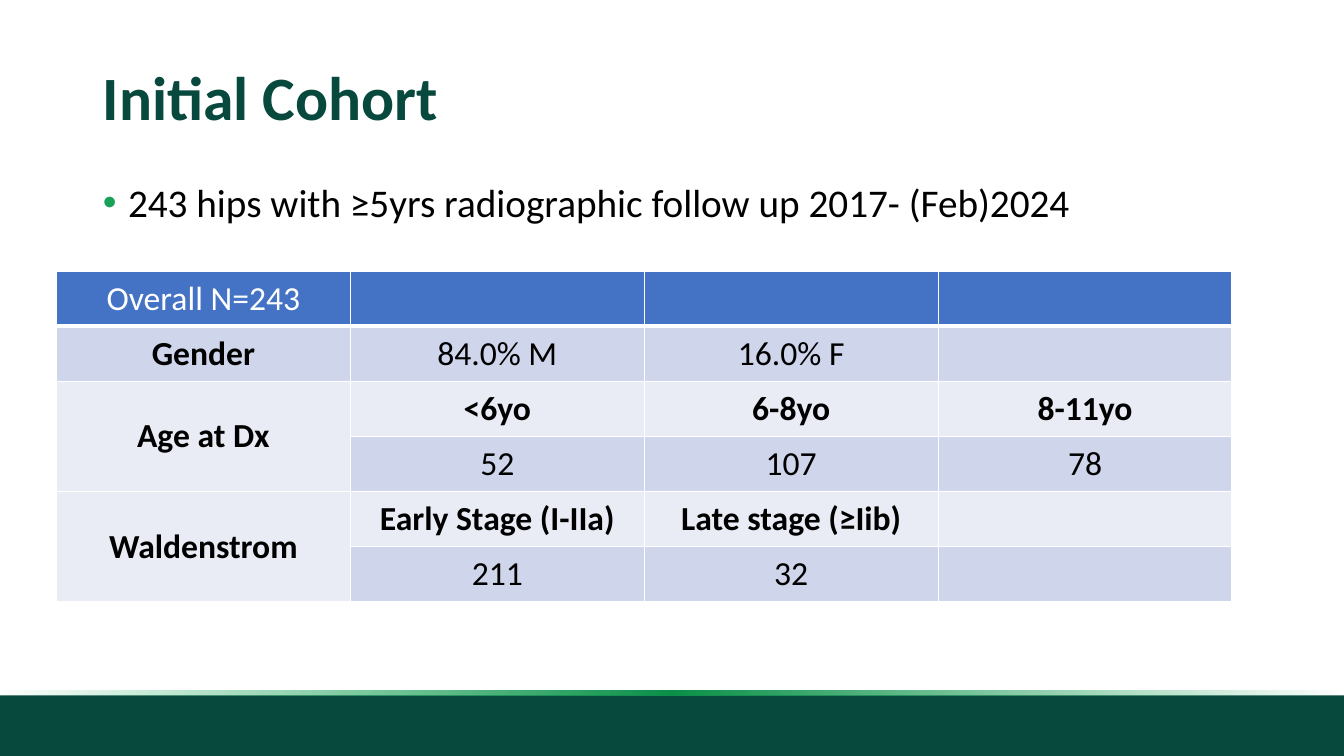
from pptx import Presentation
from pptx.dml.color import RGBColor
from pptx.enum.shapes import MSO_SHAPE
from pptx.enum.text import MSO_ANCHOR, MSO_AUTO_SIZE, PP_ALIGN
from pptx.oxml import parse_xml
from pptx.oxml.ns import nsdecls, qn
from pptx.util import Inches, Pt

RECT = MSO_SHAPE.RECTANGLE
TOP, MIDDLE = MSO_ANCHOR.TOP, MSO_ANCHOR.MIDDLE
LEFT, CENTER = PP_ALIGN.LEFT, PP_ALIGN.CENTER
NO_FIT = MSO_AUTO_SIZE.NONE

DARK_GREEN = RGBColor(0x07, 0x49, 0x3C)
BULLET_GREEN = RGBColor(0x19, 0xA1, 0x57)
BLUE = RGBColor(0x44, 0x72, 0xC4)
BAND_DARK = RGBColor(0xCF, 0xD5, 0xEA)
BAND_LIGHT = RGBColor(0xE9, 0xEB, 0xF5)
WHITE = RGBColor(0xFF, 0xFF, 0xFF)
BLACK = RGBColor(0, 0, 0)
GLOW = [(0, "0D9D4F", 0), (50, "0C9049", 100), (100, "0FAB56", 0)]

WIDTH, HEIGHT = 13.33, 7.5
COLS = 4
ROWS = [
    ["Overall N=243", "", "", ""],
    ["Gender", "84.0% M", "16.0% F", ""],
    ["Age at Dx", "<6yo", "6-8yo", "8-11yo"],
    ["", "52", "107", "78"],
    ["Waldenstrom", "Early Stage (I-IIa)", "Late stage (≥Iib)", ""],
    ["", "211", "32", ""],
]
GROUP_ROWS = (2, 4)


def set_format(target, values):
    for name, value in values.items():
        setattr(target, name, value)


def style_font(font, size, color, bold=False):
    set_format(font, {"name": "Calibri", "size": Pt(size), "bold": bold})
    font.color.rgb = color


def fill_placeholder(sp, box, text, anchor, size, color, bold=False):
    set_format(sp, dict(zip(("left", "top", "width", "height"), map(Inches, box))))
    tf = sp.text_frame
    set_format(tf, {"text": text, "word_wrap": True, "auto_size": NO_FIT,
                    "vertical_anchor": anchor})
    p = tf.paragraphs[0]
    set_format(p, {"alignment": LEFT, "line_spacing": 0.9, "space_before": Pt(0)})
    style_font(p.runs[0].font, size, color, bold)
    return p


def add_title(s, box):
    fill_placeholder(s.shapes.title, box, "Initial Cohort", MIDDLE, 44, DARK_GREEN, True)


def add_body(s, box):
    p = fill_placeholder(s.placeholders[1], box,
                         "243 hips with ≥5yrs radiographic follow up 2017- (Feb)2024",
                         TOP, 28, BLACK)
    pPr = p._p.get_or_add_pPr()
    pPr.set("marL", str(Inches(0.25)))
    pPr.set("indent", str(-Inches(0.25)))
    pPr.append(parse_xml(f'<a:buClr {nsdecls("a")}><a:srgbClr val="{BULLET_GREEN}"/></a:buClr>'))
    pPr.append(parse_xml(f'<a:buFont {nsdecls("a")} typeface="Arial"/>'))
    pPr.append(parse_xml(f'<a:buChar {nsdecls("a")} char="•"/>'))


def add_bar(s, left, top, width, height):
    sp = s.shapes.add_shape(RECT, *map(Inches, (left, top, width, height)))
    sp.shadow.inherit = False
    sp.line.fill.background()
    return sp


def add_footer(s, left, top, width, height):
    strip = 0.05
    band = add_bar(s, left, top + strip, width, height - strip)
    band.fill.solid()
    band.fill.fore_color.rgb = DARK_GREEN
    glow = add_bar(s, left, top, width, strip)
    stops = "".join(
        f'<a:gs pos="{pos * 1000}"><a:srgbClr val="{color}">'
        f'<a:alpha val="{alpha * 1000}"/></a:srgbClr></a:gs>'
        for pos, color, alpha in GLOW)
    glow._element.spPr.find(qn("a:prstGeom")).addnext(parse_xml(
        f'<a:gradFill {nsdecls("a")}><a:gsLst>{stops}</a:gsLst>'
        '<a:lin ang="10800000" scaled="0"/></a:gradFill>'))


def add_borders(cell, bottom):
    tcPr = cell._tc.get_or_add_tcPr()
    for side, width in (("L", 1), ("R", 1), ("T", 1), ("B", bottom)):
        tcPr.append(parse_xml(
            f'<a:ln{side} {nsdecls("a")} w="{Pt(width)}"><a:solidFill>'
            f'<a:srgbClr val="{WHITE}"/></a:solidFill></a:ln{side}>'))


def style_cell(cell, text, row, col):
    header = row == 0
    add_borders(cell, 3 if header else 1)
    cell.fill.solid()
    band = BAND_DARK if row % 2 else BAND_LIGHT
    cell.fill.fore_color.rgb = BLUE if header else band
    set_format(cell, {"vertical_anchor": MIDDLE,
                      "margin_left": Inches(0.13), "margin_right": Inches(0.13),
                      "margin_top": Inches(0.07), "margin_bottom": Inches(0.07)})
    if text:
        cell.text = text
        p = cell.text_frame.paragraphs[0]
        p.alignment = CENTER
        bold = not header and (col == 0 or row in GROUP_ROWS)
        style_font(p.runs[0].font, 24, WHITE if header else BLACK, bold)


def add_cohort_table(s, left, top, width, height):
    frame = s.shapes.add_table(len(ROWS), COLS, *map(Inches, (left, top, width, height)))
    table = frame.table
    for row, texts in enumerate(ROWS):
        for col, text in enumerate(texts):
            style_cell(table.cell(row, col), text, row, col)
    for row in GROUP_ROWS:
        table.cell(row, 0).merge(table.cell(row + 1, 0))


def main():
    prs = Presentation()
    prs.slide_width, prs.slide_height = Inches(WIDTH), Inches(HEIGHT)
    s = prs.slides.add_slide(prs.slide_layouts[1])
    add_footer(s, 0, 6.85, WIDTH, HEIGHT - 6.85)
    add_title(s, (0.92, 0.4, 11.5, 1.19))
    add_body(s, (0.92, 1.77, 10.52, 0.92))
    add_cohort_table(s, 0.56, 2.69, 11.66, 3.19)
    prs.save("out.pptx")


if __name__ == "__main__":
    main()
